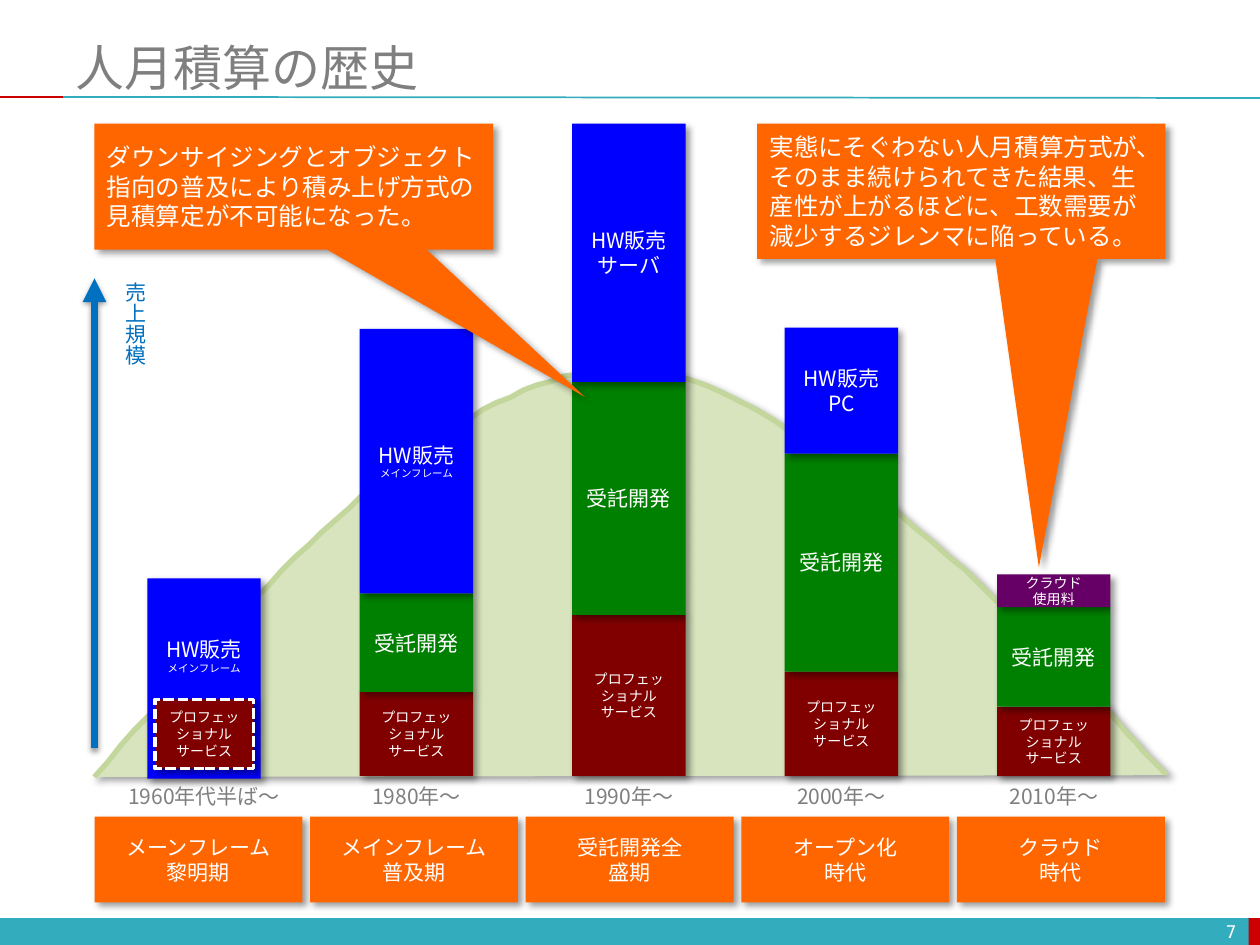
from lxml.etree import SubElement
from pptx import Presentation
from pptx.dml.color import RGBColor
from pptx.enum.dml import MSO_LINE
from pptx.enum.shapes import MSO_CONNECTOR, MSO_SHAPE
from pptx.enum.text import MSO_ANCHOR, PP_ALIGN
from pptx.oxml.ns import qn
from pptx.util import Pt

COLORS = {
    "teal": "33ACBD", "red": "CC0000", "gray": "7F7F7F", "white": "FFFFFF",
    "hill": "D7E4BD", "ridge": "C3D69B", "hardware": "0000FF",
    "development": "008000", "service": "800000", "cloud": "660066",
    "orange": "FF6600", "axis": "0070C0", "shadow": "000000",
}
CJK = "Noto Sans CJK JP"
BASE, BAR_X, BAR_STEP, BAR_W = 443.5, 84.2, 121.4, 64.8
SERVICE = [("プロフェッショナル", 8), ("サービス", 8)]
DEVELOPMENT = [("受託開発", 12)]
MAINFRAME = [("HW販売", 12), ("メインフレーム", 6)]

# Period label, label width, and stacked segments from the bottom up
PERIODS = [
    ("1960年代半ば〜", 105, []),
    ("1980年〜", 69, [("service", 48.2, SERVICE), ("development", 56.2, DEVELOPMENT),
                     ("hardware", 151.2, MAINFRAME)]),
    ("1990年〜", 69, [("service", 92.1, SERVICE), ("development", 133.2, DEVELOPMENT),
                     ("hardware", 147.6, [("HW販売", 12), ("サーバ", 12)])]),
    ("2000年〜", 69, [("service", 59.7, SERVICE), ("development", 124.6, DEVELOPMENT),
                     ("hardware", 72, [("HW販売", 12), ("PC", 12)])]),
    ("2010年〜", 69, [("service", 39.6, SERVICE), ("development", 56.9, DEVELOPMENT),
                     ("cloud", 18.7, [("クラウド", 8), ("使用料", 8)])]),
]
ERAS = [("メーンフレーム", "黎明期"), ("メインフレーム", "普及期"),
        ("受託開発全", "盛期"), ("オープン化", "時代"), ("クラウド", "時代")]
# Left, width, height, pointer adjustments, text
CALLOUTS = [
    (54, 227.8, 72, (0.73, 1.67),
     "ダウンサイジングとオブジェクト指向の普及により積み上げ方式の見積算定が不可能になった。"),
    (432.7, 233.3, 77.3, (0.19, 2.78),
     "実態にそぐわない人月積算方式が、そのまま続けられてきた結果、"
     "生産性が上がるほどに、工数需要が減少するジレンマに陥っている。"),
]


def rgb(name):
    return RGBColor.from_string(COLORS[name])


def write(tf, lines, color="white", align=PP_ALIGN.CENTER, font=CJK):
    for i, (text, size) in enumerate(lines):
        p = tf.paragraphs[0] if i == 0 else tf.add_paragraph()
        p.alignment = align
        r = p.add_run()
        r.text = text
        for key, value in {"name": font, "size": Pt(size)}.items():
            setattr(r.font, key, value)
        r.font.color.rgb = rgb(color)
        SubElement(r.font._element, qn("a:ea"), typeface=CJK)


def add_shadow(sp, blur=4, dist=3, angle=45, alpha=40):
    spPr = sp._element.spPr
    effects = spPr.find(qn("a:effectLst"))
    if effects is None:
        effects = SubElement(spPr, qn("a:effectLst"))
    outer = SubElement(effects, qn("a:outerShdw"), blurRad=str(Pt(blur)),
                       dist=str(Pt(dist)), dir=str(angle * 60000), rotWithShape="0")
    color = SubElement(outer, qn("a:srgbClr"), val=COLORS["shadow"])
    SubElement(color, qn("a:alpha"), val=str(alpha * 1000))


def add_block(s, box, color, lines=(), shape=MSO_SHAPE.RECTANGLE,
              align=PP_ALIGN.CENTER, shadow=True):
    sp = s.shapes.add_shape(shape, *map(Pt, box))
    sp.fill.solid()
    sp.fill.fore_color.rgb = rgb(color)
    sp.line.fill.background()
    sp.shadow.inherit = False
    if shadow:
        add_shadow(sp)
    sp.text_frame.vertical_anchor = MSO_ANCHOR.MIDDLE
    write(sp.text_frame, lines, align=align)
    return sp


def add_text(s, box, line, color, align=PP_ALIGN.CENTER, font=CJK, wrap=False):
    tf = s.shapes.add_textbox(*map(Pt, box)).text_frame
    tf.word_wrap = wrap
    write(tf, [line], color, align, font)
    return tf


def add_line(s, ends, color, width):
    c = s.shapes.add_connector(MSO_CONNECTOR.STRAIGHT, *map(Pt, ends))
    c.line.color.rgb = rgb(color)
    c.line.width = Pt(width)
    SubElement(c._element.spPr, qn("a:effectLst"))
    return c


def bezier(p0, p1, p2, p3, steps=40):
    for i in range(1, steps + 1):
        t = i / steps
        u = 1 - t
        yield tuple(u**3 * a + 3 * u * u * t * b + 3 * u * t * t * c + t**3 * d
                    for a, b, c, d in zip(p0, p1, p2, p3))


def add_hill(s):
    start, top, end = (54, BASE), (360.7, 210.2), (666, 442.8)
    points = [*bezier(start, (156.2, 326.9), (258.5, 210.2), top),
              *bezier(top, (462.9, 210.2), end, end)]
    builder = s.shapes.build_freeform(*start, scale=Pt(1))
    builder.add_line_segments(points, close=False)
    sp = builder.convert_to_shape()
    sp.fill.solid()
    sp.fill.fore_color.rgb = rgb("hill")
    sp.line.color.rgb = rgb("ridge")
    sp.line.width = Pt(3)
    sp.shadow.inherit = False
    add_shadow(sp)


def add_frame(s):
    add_block(s, (0, 524.6, 720, 15.4), "teal", shadow=False)
    add_block(s, (713.5, 524.6, 6.5, 15.4), "red", shadow=False)
    add_line(s, (36, 55.4, 720, 56), "teal", 1)
    add_line(s, (0, 55.4, 36, 55.4), "red", 1)
    tf = add_text(s, (545.8, 523.4, 167.8, 17.3), ("7", 10), "white",
                  PP_ALIGN.RIGHT, "DejaVu Sans Mono", True)
    tf.vertical_anchor = MSO_ANCHOR.MIDDLE


def add_title(s, text):
    sp = s.shapes.title
    for key, value in {"left": 36, "top": 21.6, "width": 684, "height": 33.1}.items():
        setattr(sp, key, Pt(value))
    sp.text_frame.vertical_anchor = MSO_ANCHOR.MIDDLE
    write(sp.text_frame, [(text, 28)], "gray", PP_ALIGN.LEFT, "Calibri")


def add_periods(s):
    # The first bar holds its service part inside the hardware block
    sp = add_block(s, (BAR_X, 330.5, BAR_W, 114.5), "hardware", MAINFRAME)
    sp.text_frame.margin_bottom = Pt(30)
    inner = add_block(s, (88.6, 399.6, 56.2, 39.6), "service", SERVICE)
    inner.line.color.rgb = rgb("white")
    inner.line.width = Pt(2)
    inner.line.dash_style = MSO_LINE.SQUARE_DOT

    for i, (label, width, segments) in enumerate(PERIODS):
        x, y = BAR_X + i * BAR_STEP, BASE
        for color, height, lines in segments:
            y -= height
            add_block(s, (x, y, BAR_W, height), color, lines)
        add_text(s, (x + (BAR_W - width) / 2, 444.2, width, 21.6), (label, 12), "gray")


def add_sales_axis(s):
    c = add_line(s, (54, 427.7, 54, 159.1), "axis", 4.5)
    SubElement(c._element.spPr.find(qn("a:ln")), qn("a:tailEnd"), type="triangle")
    add_shadow(c, 3.1, 1.6, 90, 38)
    tf = add_text(s, (59, 154.1, 28.8, 55.4), ("売上規模", 12), "axis", PP_ALIGN.LEFT)
    tf._txBody.bodyPr.set("vert", "eaVert")


def main():
    prs = Presentation()
    prs.slide_width, prs.slide_height = Pt(720), Pt(540)
    s = prs.slides.add_slide(prs.slide_layouts[5])
    add_frame(s)
    add_title(s, "人月積算の歴史")
    add_hill(s)
    add_periods(s)
    # Callouts above the bars
    for x, width, height, adjustments, text in CALLOUTS:
        sp = add_block(s, (x, 70.6, width, height), "orange", [(text, 14)],
                       MSO_SHAPE.RECTANGULAR_CALLOUT, PP_ALIGN.LEFT)
        for i, value in enumerate(adjustments):
            sp.adjustments[i] = value
    # Era boxes below the bars
    for i, era in enumerate(ERAS):
        add_block(s, (54 + i * 123.2, 466.6, 118.8, 49), "orange",
                  [(text, 12) for text in era])
    add_sales_axis(s)
    prs.save("out.pptx")


if __name__ == "__main__":
    main()
